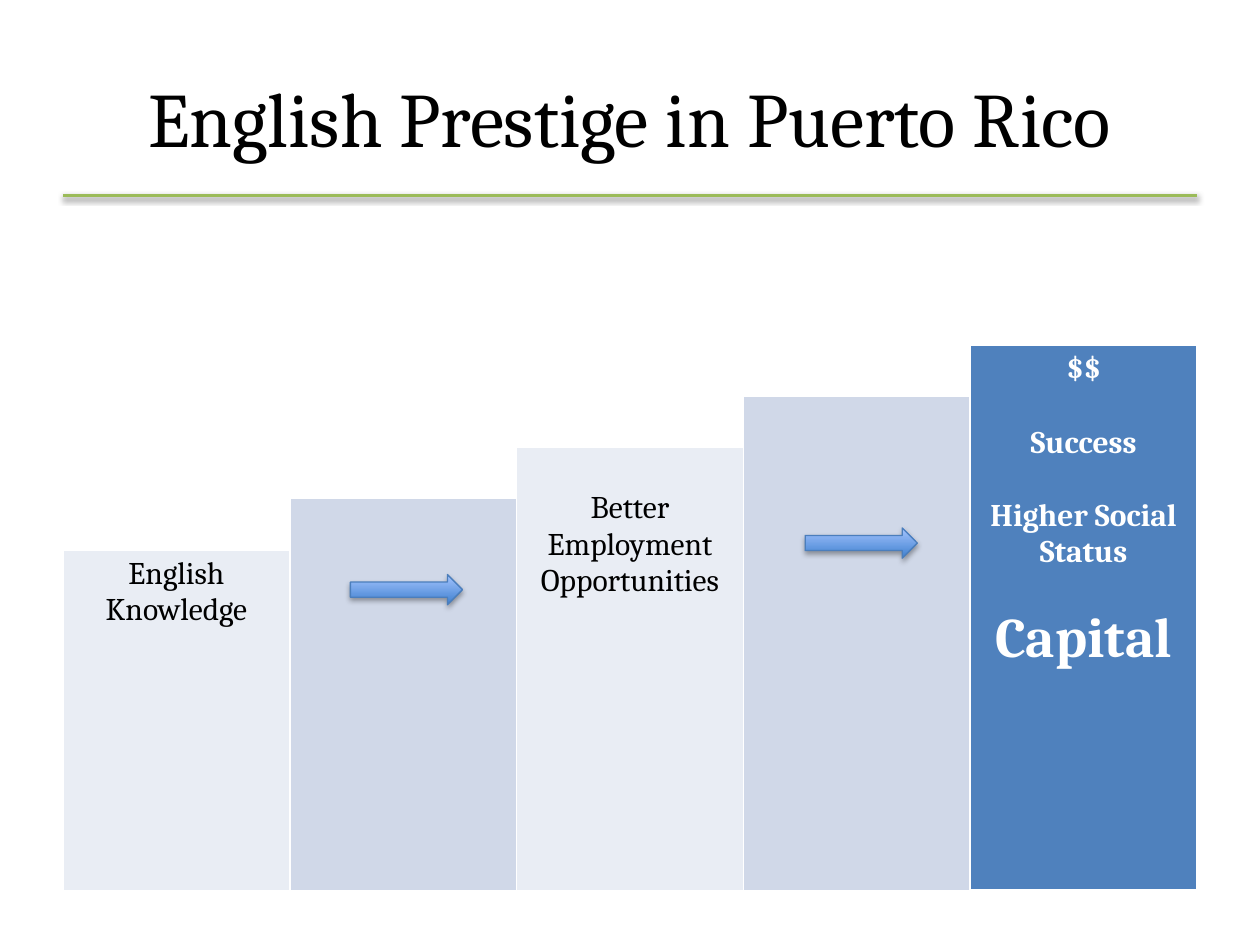
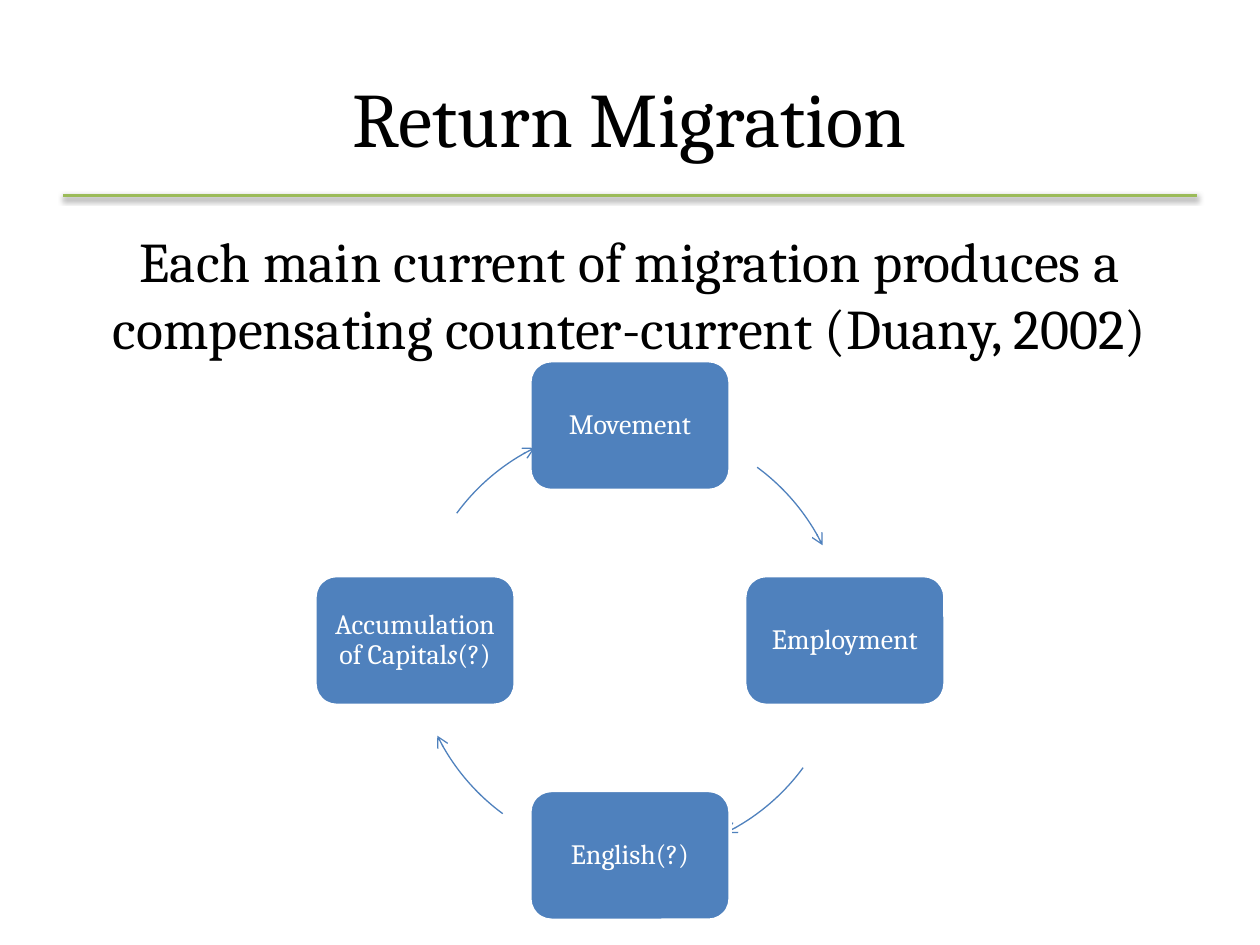
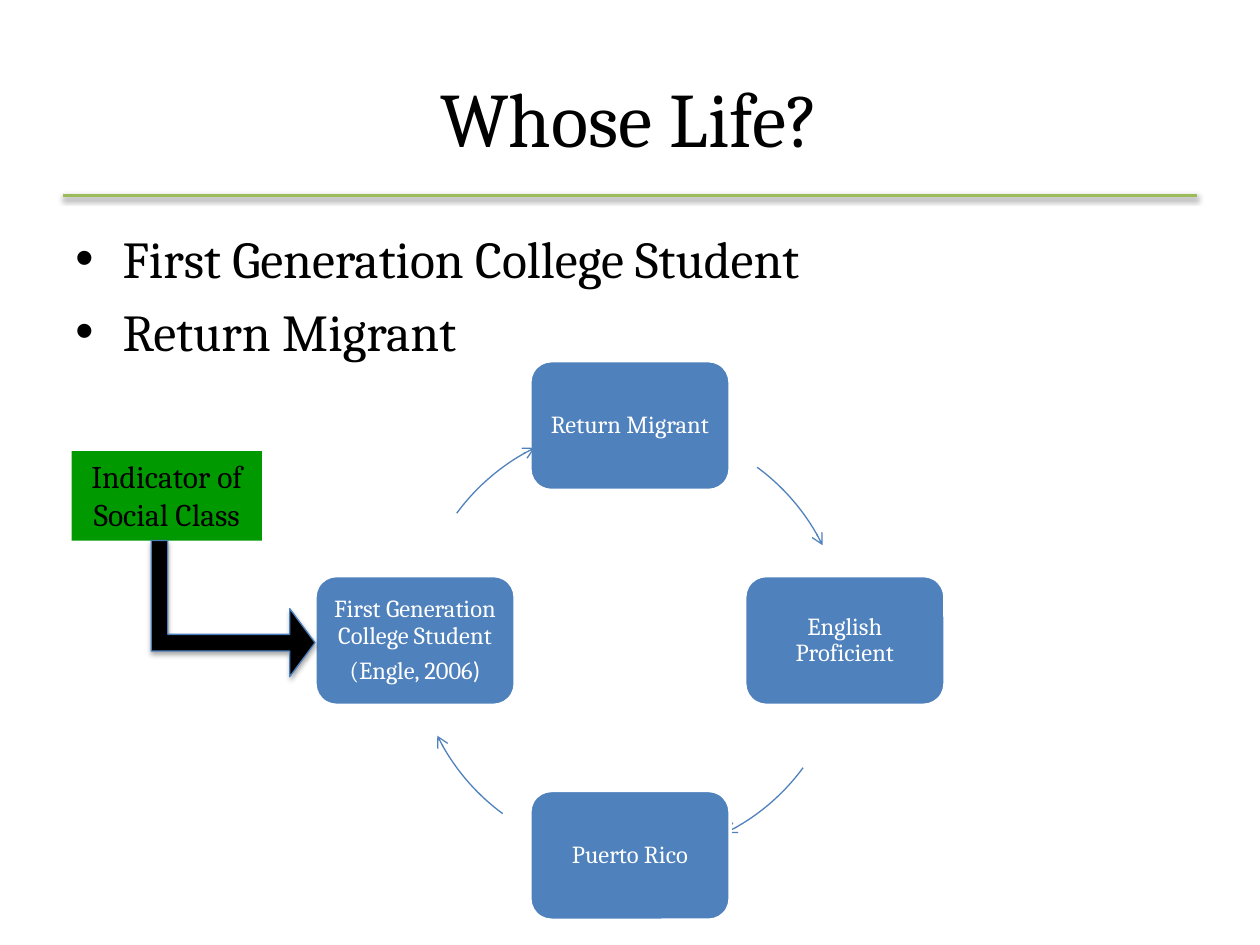
"""Build three slides on English, prestige and return migration in Puerto Rico."""
from lxml import etree
from pptx import Presentation
from pptx import util as u
from pptx.dml.color import RGBColor
from pptx.enum import shapes, text
from pptx.oxml.ns import qn

Pt = u.Pt
SHAPE = shapes.MSO_SHAPE
CENTER = text.PP_ALIGN.CENTER
MIDDLE = text.MSO_ANCHOR.MIDDLE
FONT = "Cambria"
C = {"black": "000000", "white": "FFFFFF", "rule": "9BBB59", "blue": "4F81BD",
     "edge": "4B7EBC", "deep": "3F80CE", "light": "A4C4FF", "pale": "E9EDF4",
     "mist": "D0D8E8", "green": "009900"}

PRESTIGE = "English Prestige in Puerto Rico"
STEPS = [
    {"top": 4, "fill": "pale", "lines": [("English Knowledge", 18)]},
    {"top": 3, "fill": "mist", "lines": []},
    {"top": 2, "fill": "pale", "lines": [("Better Employment Opportunities", 18)], "drop": 21},
    {"top": 1, "fill": "mist", "lines": []},
    {"top": 0, "fill": "blue", "color": "white", "bold": True,
     "lines": [("$$", 18), ("Success", 18), ("Higher Social Status", 18), ("Capital", 32)]},
]
ROW_HEIGHTS = [29.25] * 4 + [188.5]
COL_WIDTH = 129.6
STEP_ARROWS = [(200.2, 328.3), (460.1, 301.7)]

MIGRATION = "Return Migration"
CURRENT = "Each main current of migration produces a compensating counter-current (Duany, 2002)"
MIGRATION_CYCLE = [
    ["Movement"], ["Employment"], ["English(?)"],
    [["Accumulation of Capital", ("s", {"italic": True}), "(?)"]],
]

LIFE = "Whose Life?"
LIFE_POINTS = ["First Generation College Student", "Return Migrant"]
LIFE_CYCLE = [
    ["Return Migrant"], ["English Proficient"], ["Puerto Rico"],
    ["First Generation College Student", ["(Engle, 2006", (")", {"name": "Calibri"})]],
]
INDICATOR = "Indicator of Social Class"

CYCLE_X, CYCLE_Y, RADIUS = 360, 366, 122.8
NODE_W, NODE_H = 114.5, 74.2
ARC_START, ARC_END = 306.3, 333.7


def rgb(name):
    return RGBColor.from_string(C[name])


def add_shadow(sp, alpha, dist):
    sp_pr = sp._element.spPr
    for old in sp_pr.findall(qn("a:effectLst")):
        sp_pr.remove(old)
    effects = etree.SubElement(sp_pr, qn("a:effectLst"))
    outer = etree.SubElement(effects, qn("a:outerShdw"), blurRad=str(Pt(3.1)),
                             dist=str(Pt(dist)), dir="5400000", rotWithShape="0")
    color = etree.SubElement(outer, qn("a:srgbClr"), val=C["black"])
    etree.SubElement(color, qn("a:alpha"), val=str(alpha * 1000))


def add_bullet(p, indent):
    p_pr = p._p.get_or_add_pPr()
    p_pr.set("marL", str(Pt(indent)))
    p_pr.set("indent", str(-Pt(indent)))
    etree.SubElement(p_pr, qn("a:buFont"), typeface="Arial")
    etree.SubElement(p_pr, qn("a:buChar"), char="•")


def write(tf, paras, size, color="black", align=CENTER, before=0, after=0,
          spacing=None, bullet=0, bold=False):
    """Fill a text frame; a paragraph is a string or a list of runs."""
    tf.word_wrap = True
    for i, para in enumerate(paras):
        p = tf.paragraphs[0] if i == 0 else tf.add_paragraph()
        p.alignment = align
        p.line_spacing = spacing
        p.space_before = Pt(before if i else 0)
        p.space_after = Pt(after)
        if bullet:
            add_bullet(p, bullet)
        p.font.name, p.font.size, p.font.bold = FONT, Pt(size), bold
        p.font.color.rgb = rgb(color)
        for part in [para] if isinstance(para, str) else para:
            words, style = (part, {}) if isinstance(part, str) else part
            r = p.add_run()
            r.text = words
            for key, value in style.items():
                setattr(r.font, key, value)


def add_box(s, x, y, w, h, paras, size, **style):
    tf = s.shapes.add_textbox(Pt(x), Pt(y), Pt(w), Pt(h)).text_frame
    write(tf, paras, size, **style)
    return tf


def add_shape(s, kind, x, y, w, h, fill=None, line=None, width=0.75):
    sp = s.shapes.add_shape(kind, Pt(x), Pt(y), Pt(w), Pt(h))
    sp.shadow.inherit = False
    if fill:
        sp.fill.solid()
        sp.fill.fore_color.rgb = rgb(fill)
    else:
        sp.fill.background()
    if line:
        sp.line.color.rgb = rgb(line)
        sp.line.width = Pt(width)
    else:
        sp.line.fill.background()
    return sp


def new_slide(prs, title):
    s = prs.slides.add_slide(prs.slide_layouts[6])
    rule = s.shapes.add_connector(shapes.MSO_CONNECTOR.STRAIGHT,
                                  Pt(36), Pt(111.6), Pt(684), Pt(111.6))
    rule.line.color.rgb = rgb("rule")
    rule.line.width = Pt(2)
    add_shadow(rule, 38, 1.6)
    add_box(s, 36, 21.6, 648, 90, [title], 44).vertical_anchor = MIDDLE
    return s


def set_borders(cell, bottom):
    tc_pr = cell._tc.get_or_add_tcPr()
    for side, width in (("L", 1), ("R", 1), ("T", 1), ("B", bottom)):
        ln = etree.SubElement(tc_pr, qn("a:ln" + side), w=str(Pt(width)))
        fill = etree.SubElement(ln, qn("a:solidFill"))
        etree.SubElement(fill, qn("a:srgbClr"), val=C["white"])


def add_steps(s):
    rows, cols = len(ROW_HEIGHTS), len(STEPS)
    tbl = s.shapes.add_table(rows, cols, Pt(36), Pt(197.3), Pt(COL_WIDTH * cols),
                             Pt(sum(ROW_HEIGHTS))).table
    tbl.first_row = tbl.horz_banding = False
    for row, height in zip(tbl.rows, ROW_HEIGHTS):
        row.height = Pt(height)
    for c, step in enumerate(STEPS):
        tbl.columns[c].width = Pt(COL_WIDTH)
        for r in range(rows):
            cell = tbl.cell(r, c)
            set_borders(cell, 3 if step["top"] == 0 else 1)
            if r < step["top"]:
                cell.fill.background()
            else:
                cell.fill.solid()
                cell.fill.fore_color.rgb = rgb(step["fill"])
        cell = tbl.cell(step["top"], c)
        if step["top"] < rows - 1:
            cell.merge(tbl.cell(rows - 1, c))
        cell.margin_top = Pt(3.6 + step.get("drop", 0))
        write(cell.text_frame, [words for words, _ in step["lines"]], 18,
              step.get("color", "black"), before=21, bold=step.get("bold", False))
        for p, (_, size) in zip(cell.text_frame.paragraphs, step["lines"]):
            p.font.size = Pt(size)


def add_step_arrow(s, x, y):
    sp = add_shape(s, SHAPE.RIGHT_ARROW, x, y, 64.1, 17.3, line="edge")
    sp.fill.gradient()
    sp.fill.gradient_angle = 90
    for stop, name, position in zip(sp.fill.gradient_stops, ("deep", "light"), (0, 1)):
        stop.color.rgb = rgb(name)
        stop.position = position
    add_shadow(sp, 35, 1.8)


def add_cycle(s, nodes, size, inset):
    directions = [(0, -1), (1, 0), (0, 1), (-1, 0)]
    for i, (paras, (dx, dy)) in enumerate(zip(nodes, directions)):
        node = add_shape(s, SHAPE.ROUNDED_RECTANGLE,
                         CYCLE_X + dx * RADIUS - NODE_W / 2,
                         CYCLE_Y + dy * RADIUS - NODE_H / 2,
                         NODE_W, NODE_H, "blue", "white", 2)
        tf = node.text_frame
        tf.margin_left = tf.margin_right = tf.margin_top = tf.margin_bottom = Pt(inset)
        tf.vertical_anchor = MIDDLE
        write(tf, paras, size, "white", after=0.35 * size, spacing=0.9)
        arc = add_shape(s, SHAPE.ARC, CYCLE_X - RADIUS, CYCLE_Y - RADIUS,
                        2 * RADIUS, 2 * RADIUS, line="blue")
        for k, angle in enumerate((ARC_START, ARC_END)):
            arc.adjustments[k] = (angle + 90 * i) % 360 * 0.6
        etree.SubElement(arc.line._get_or_add_ln(), qn("a:tailEnd"), type="arrow")


def add_indicator(s):
    label = add_shape(s, SHAPE.RECTANGLE, 41, 257.8, 108.7, 51.1, "green")
    label.text_frame.vertical_anchor = text.MSO_ANCHOR.TOP
    write(label.text_frame, [INDICATOR], 18)
    arrow = add_shape(s, SHAPE.BENT_UP_ARROW, 94.3, 301, 77.8, 93.6, "black", "edge")
    arrow.rotation = 90
    for k, value in enumerate((0.122, 0.25, 0.186)):
        arrow.adjustments[k] = value
    add_shadow(arrow, 35, 1.8)


def main():
    prs = Presentation()
    prs.slide_width, prs.slide_height = Pt(720), Pt(540)

    s = new_slide(prs, PRESTIGE)
    add_steps(s)
    for x, y in STEP_ARROWS:
        add_step_arrow(s, x, y)

    s = new_slide(prs, MIGRATION)
    add_box(s, 36, 126, 648, 103.7, [CURRENT], 32)
    add_cycle(s, MIGRATION_CYCLE, 16, 5)

    s = new_slide(prs, LIFE)
    add_box(s, 36, 126, 648, 80, LIFE_POINTS, 29.6,
            align=text.PP_ALIGN.LEFT, before=6, bullet=27)
    add_cycle(s, LIFE_CYCLE, 14, 4.3)
    add_indicator(s)

    prs.save("out.pptx")


if __name__ == "__main__":
    main()
